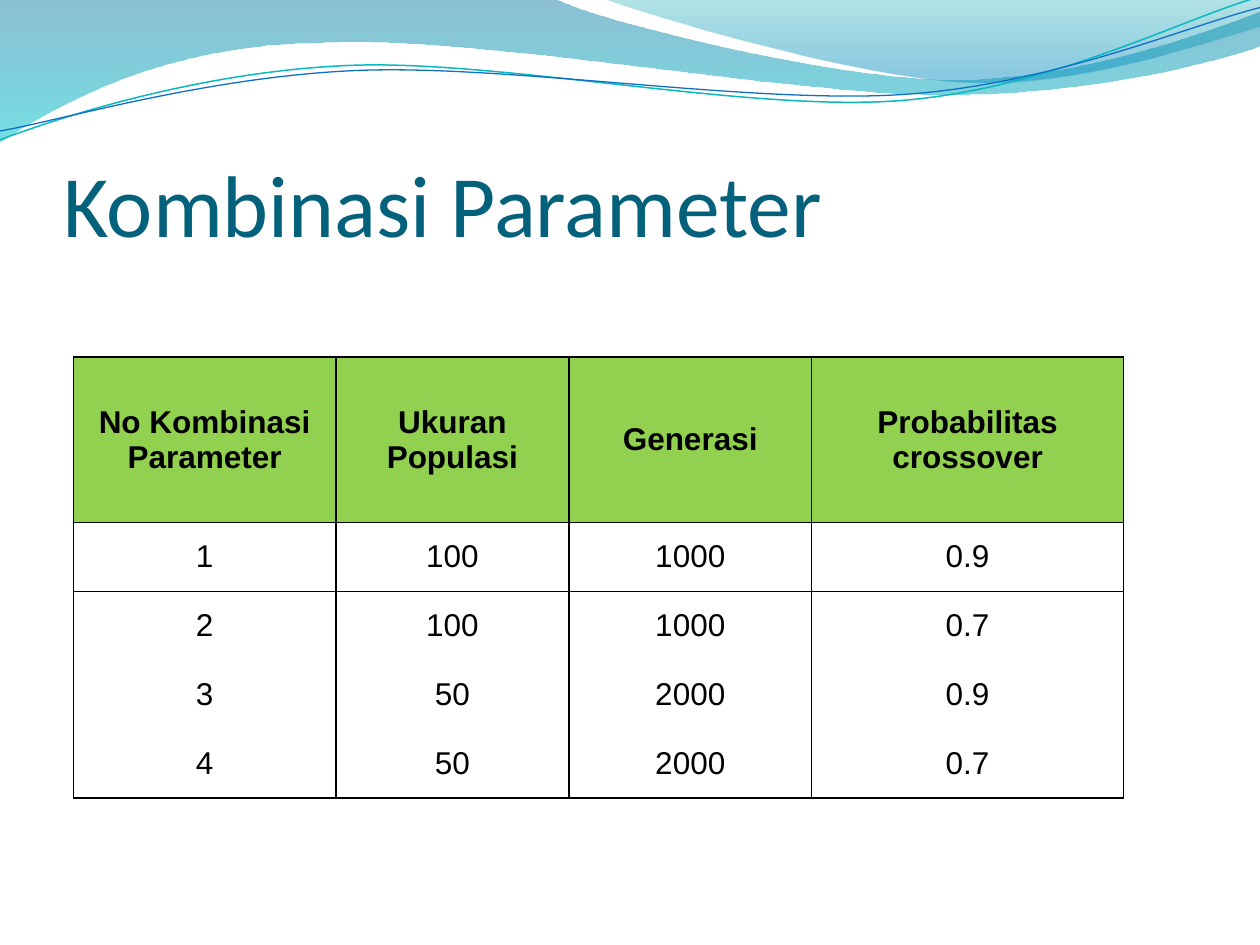
from lxml.etree import SubElement
from pptx import Presentation
from pptx.dml.color import RGBColor
from pptx.enum.text import MSO_ANCHOR, PP_ALIGN
from pptx.oxml.ns import qn
from pptx.util import Cm, Pt

TITLE = "Kombinasi Parameter"
HEADER = ("No Kombinasi Parameter", "Ukuran Populasi", "Generasi", "Probabilitas crossover")
ROWS = [
    ("1", "100", "1000", "0.9"),
    ("2", "100", "1000", "0.7"),
    ("3", "50", "2000", "0.9"),
    ("4", "50", "2000", "0.7"),
]
COL_WIDTHS = (5.29, 4.7, 4.89, 6.29)
HEADER_HEIGHT, ROW_HEIGHT = 3.33, 1.39
PLAIN_STYLE = "{2D5ABB26-0587-4C30-8999-92F81FD0307C}"  # no style, no grid

# Outlines in inches: a start point, then lines (x, y) and Bezier curves (three points).
# Gradient stops: colour, position, opacity in percent.
BANDS = [
    ([(0, -0.01), (4.4, -0.01), (4.76, 0.17, 6.64, 0.63, 7.58, 0.63),
      (8.53, 0.63, 9.58, 0.26, 10, 0.09), (10.01, 0.36),
      (9.83, 0.44, 8.7, 0.76, 7.46, 0.75), (6.22, 0.75, 3.82, 0.28, 2.57, 0.34),
      (1.29, 0.35, 0.46, 0.83, -0.01, 1.13), (0, -0.01)],
     [("0074A1", 0, 45), ("00C6CF", 100, 55)]),
    ([(4.79, -0.01), (5.09, 0.11, 6.82, 0.62, 7.69, 0.65),
      (8.56, 0.69, 9.61, 0.32, 10, 0.21), (10, 0), (4.79, -0.01)],
     [("00A1A9", 0, 30), ("008BBF", 80, 45)]),
]
WAVES = [
    ([(0, 1.11), (0.48, 0.93, 1.58, 0.57, 2.77, 0.52),
      (3.95, 0.47, 5.93, 0.89, 7.13, 0.8), (8.33, 0.71, 9.38, 0.15, 9.98, -0.02)],
     "0AB8BF", 0.85),
    ([(0, 1.04), (0.47, 0.96, 1.64, 0.61, 2.83, 0.56),
      (4.03, 0.51, 5.97, 0.83, 7.17, 0.75), (8.36, 0.67, 9.41, 0.21, 10, 0.06)],
     "0F6FC6", 0.75),
]
UNITS = 1000  # freeform units per inch


def rgb(value):
    return RGBColor.from_string(value)


def add_outline(shapes, outline, close):
    """Add a freeform through all points, then join each curve's three lines into one Bezier."""
    points = [(seg[k] * UNITS, seg[k + 1] * UNITS)
              for seg in outline for k in range(0, len(seg), 2)]
    builder = shapes.build_freeform(*points[0], scale=Cm(2.54) / UNITS)
    builder.add_line_segments(points[1:], close=close)
    sp = builder.convert_to_shape()
    sp.shadow.inherit = False
    lines = iter(list(sp._element.spPr.iter(qn("a:lnTo"))))
    for seg in outline[1:]:
        line = next(lines)
        if len(seg) == 6:
            curve = line.makeelement(qn("a:cubicBezTo"))
            line.addprevious(curve)
            for part in (line, next(lines), next(lines)):
                curve.append(part[0])
                part.getparent().remove(part)
    return sp


def add_band(shapes, outline, stops):
    sp = add_outline(shapes, outline, True)
    sp.line.fill.background()
    sp.fill.gradient()
    sp.fill.gradient_angle = 270
    for stop, (color, position, _) in zip(sp.fill.gradient_stops, stops):
        stop.color.rgb = rgb(color)
        stop.position = position / 100
    for clr, (_, _, opacity) in zip(sp._element.spPr.iter(qn("a:srgbClr")), stops):
        SubElement(clr, qn("a:alpha"), val=str(opacity * 1000))


def add_wave(shapes, outline, color, width):
    sp = add_outline(shapes, outline, False)
    sp.fill.background()
    sp.line.color.rgb = rgb(color)
    sp.line.width = Pt(width)


def add_borders(cell, sides):
    tcPr = cell._tc.get_or_add_tcPr()
    for side in sides:
        ln = SubElement(tcPr, qn("a:ln" + side), w=str(Pt(1)))
        SubElement(SubElement(ln, qn("a:solidFill")), qn("a:srgbClr"), val="000000")


def format_cell(cell, text, header, sides):
    add_borders(cell, sides)
    if header:
        cell.fill.solid()
        cell.fill.fore_color.rgb = rgb("92D050")
    else:
        cell.fill.background()
    cell.vertical_anchor = MSO_ANCHOR.MIDDLE
    cell.margin_left = cell.margin_right = Cm(0.18)
    cell.margin_top = cell.margin_bottom = 0
    cell.text_frame.text = text
    p = cell.text_frame.paragraphs[0]
    p.alignment = PP_ALIGN.CENTER
    font = p.runs[0].font
    font.name, font.size, font.bold = "Arial", Pt(18), header
    font.color.rgb = rgb("000000")


def add_parameter_table(shapes):
    data = [HEADER] + ROWS
    heights = [HEADER_HEIGHT] + [ROW_HEIGHT] * len(ROWS)
    table = shapes.add_table(len(data), len(HEADER), Cm(1.48), Cm(7.2),
                             Cm(sum(COL_WIDTHS)), Cm(sum(heights))).table
    table.first_row = table.horz_banding = False
    table._tbl.tblPr.find(qn("a:tableStyleId")).text = PLAIN_STYLE
    for col, width in zip(table.columns, COL_WIDTHS):
        col.width = Cm(width)
    for i, values in enumerate(data):
        table.rows[i].height = Cm(heights[i])
        sides = ["L", "R"]
        if i <= 1:
            sides.append("T")
        if i in (0, len(ROWS)):
            sides.append("B")
        for j, text in enumerate(values):
            format_cell(table.cell(i, j), text, i == 0, sides)


def format_title(title):
    title.left, title.top, title.width, title.height = Cm(1.27), Cm(1.96), Cm(23.06), Cm(3.18)
    tf = title.text_frame
    tf.text = TITLE
    tf.vertical_anchor = MSO_ANCHOR.BOTTOM
    tf.margin_left = tf.margin_right = tf.margin_bottom = 0
    tf.margin_top = Cm(0.13)
    p = tf.paragraphs[0]
    p.alignment = PP_ALIGN.LEFT
    font = p.runs[0].font
    font.name, font.size = "Calibri", Pt(50)
    font.color.rgb = rgb("04617B")


def main():
    prs = Presentation()
    prs.slide_width, prs.slide_height = Cm(25.4), Cm(19.05)
    s = prs.slides.add_slide(prs.slide_layouts[5])
    for outline, stops in BANDS:
        add_band(s.shapes, outline, stops)
    for outline, color, width in WAVES:
        add_wave(s.shapes, outline, color, width)
    format_title(s.shapes.title)
    add_parameter_table(s.shapes)
    prs.save("out.pptx")


if __name__ == "__main__":
    main()
